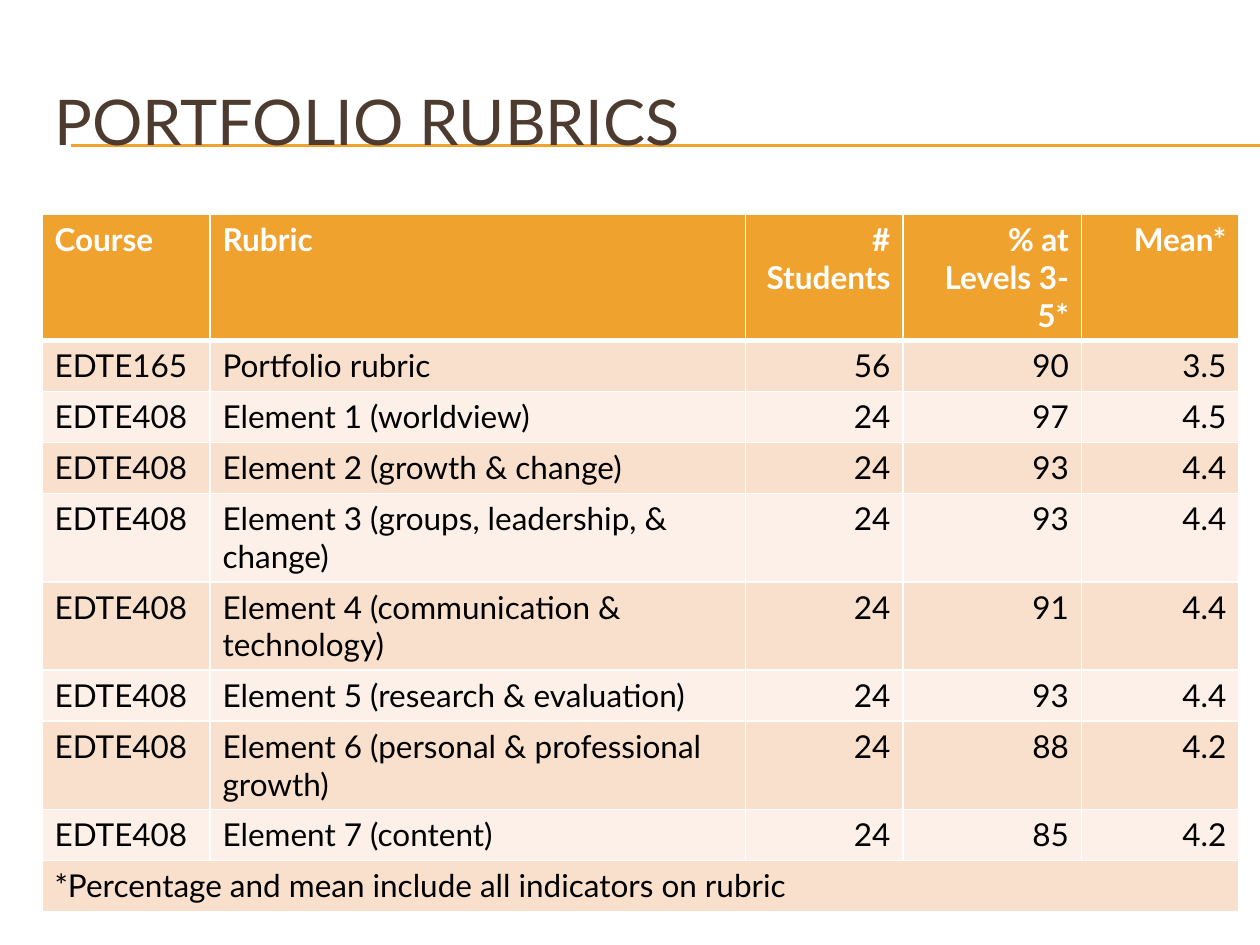
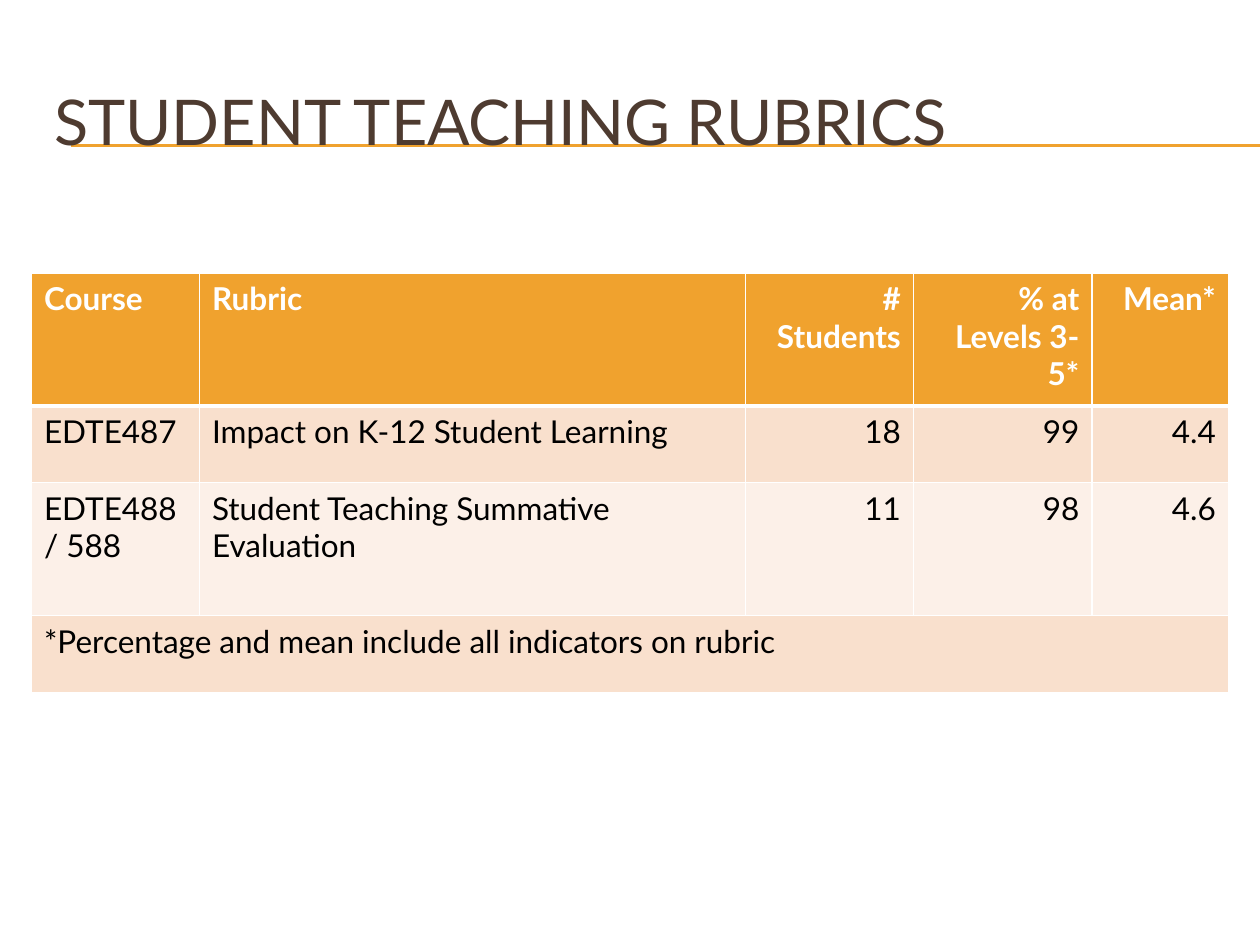
from lxml import etree
from pptx import Presentation
from pptx.dml.color import RGBColor
from pptx.enum.shapes import MSO_CONNECTOR as Connector
from pptx.enum.text import MSO_ANCHOR as Anchor, PP_ALIGN as Align
from pptx.oxml.ns import qn
from pptx.util import Inches, Pt

FONT = "Lato"
ORANGE = RGBColor(0xF0, 0xA2, 0x2E)
BROWN = RGBColor(0x4E, 0x3B, 0x30)
PEACH = RGBColor(0xF9, 0xE0, 0xCD)
CREAM = RGBColor(0xFC, 0xF0, 0xE8)
WHITE = RGBColor(0xFF, 0xFF, 0xFF)
BLACK = RGBColor(0, 0, 0)

COLUMNS = 120
TABLE_COLUMNS = 114
TITLE_BOX = (4, 6, TABLE_COLUMNS, 11)
RULE_LEFT = 6.75
RULE_ROWS = (13.8, 13.92)
FIRST_NUMBER_COLUMN = 2

HEADINGS = ("Course", "Rubric", "# Students", "% at Levels 3-5*", "Mean*")
FOOTNOTE = "*Percentage and mean include all indicators on rubric"
PORTFOLIO_ROWS = (
    ("EDTE165", "Portfolio rubric", "56", "90", "3.5"),
    ("EDTE408", "Element 1 (worldview)", "24", "97", "4.5"),
    ("EDTE408", "Element 2 (growth & change)", "24", "93", "4.4"),
    ("EDTE408", "Element 3 (groups, leadership, & change)", "24", "93", "4.4"),
    ("EDTE408", "Element 4 (communication & technology)", "24", "91", "4.4"),
    ("EDTE408", "Element 5 (research & evaluation)", "24", "93", "4.4"),
    ("EDTE408", "Element 6 (personal & professional growth)", "24", "88", "4.2"),
    ("EDTE408", "Element 7 (content)", "24", "85", "4.2"),
)
TEACHING_ROWS = (
    ("EDTE487", "Impact on K-12 Student Learning", "18", "99", "4.4"),
    ("EDTE488/ 588", "Student Teaching Summative Evaluation", "11", "98", "4.6"),
)


def grid(units):
    return Inches(units / 12)


def add_run(paragraph, text, size, color, bold=False):
    run = paragraph.add_run()
    run.text = text
    run.font.name = FONT
    run.font.size = Pt(size)
    run.font.bold = bold
    run.font.color.rgb = color


def add_rule(slide, row):
    rule = slide.shapes.add_connector(
        Connector.STRAIGHT, grid(RULE_LEFT), grid(row), grid(COLUMNS), grid(row))
    rule.line.color.rgb = ORANGE
    rule.line.width = Pt(0.75)
    etree.SubElement(rule.element.spPr, qn("a:effectLst"))


def add_title(slide, text):
    box = slide.shapes.add_textbox(*map(grid, TITLE_BOX))
    frame = box.text_frame
    frame.word_wrap = True
    frame.vertical_anchor = Anchor.MIDDLE
    add_run(frame.paragraphs[0], text, 36, BROWN)


def set_borders(cell, top, bottom):
    properties = cell._tc.get_or_add_tcPr()
    for side, width in (("L", 1), ("R", 1), ("T", top), ("B", bottom)):
        line = etree.SubElement(properties, qn(f"a:ln{side}"), w=str(Pt(width)))
        fill = etree.SubElement(line, qn("a:solidFill"))
        etree.SubElement(fill, qn("a:srgbClr"), val=str(WHITE))


def style_cell(cell, row, column):
    set_borders(cell, 3 if row == 1 else 1, 3 if row == 0 else 1)
    cell.fill.solid()
    cell.fill.fore_color.rgb = ORANGE if row == 0 else PEACH if row % 2 else CREAM
    if column >= FIRST_NUMBER_COLUMN:
        cell.text_frame.paragraphs[0].alignment = Align.RIGHT


def add_rubric_table(slide, left, top, widths, heights, rows):
    content = (HEADINGS, *rows, (FOOTNOTE,))
    table = slide.shapes.add_table(
        len(content), len(widths), grid(left), grid(top),
        grid(sum(widths)), grid(sum(heights))).table
    table.first_row = table.horz_banding = False
    for column, width in zip(table.columns, widths):
        column.width = grid(width)
    for table_row, height in zip(table.rows, heights):
        table_row.height = grid(height)
    for row, texts in enumerate(content):
        for column in range(len(widths)):
            style_cell(table.cell(row, column), row, column)
        for column, text in enumerate(texts):
            paragraph = table.cell(row, column).text_frame.paragraphs[0]
            add_run(paragraph, text, 18, BLACK if row else WHITE, bold=row == 0)
    last = len(content) - 1
    table.cell(last, 0).merge(table.cell(last, len(widths) - 1))


def add_rubric_slide(presentation, title, **table):
    slide = presentation.slides.add_slide(presentation.slide_layouts[6])
    for row in RULE_ROWS:
        add_rule(slide, row)
    add_title(slide, title)
    add_rubric_table(slide, **table)


def main():
    presentation = Presentation()
    presentation.slide_width = grid(COLUMNS)
    presentation.slide_height = Inches(7.5)
    add_rubric_slide(
        presentation, "PORTFOLIO RUBRICS", left=4, top=20.4,
        widths=(16, 51, 15, 17, 15), heights=[4.87] * 10, rows=PORTFOLIO_ROWS)
    add_rubric_slide(
        presentation, "STUDENT TEACHING RUBRICS", left=3, top=26,
        widths=(16, 52, 16, 17, 13), heights=(12.67, 7.3) * 2, rows=TEACHING_ROWS)
    presentation.save("out.pptx")


if __name__ == "__main__":
    main()
